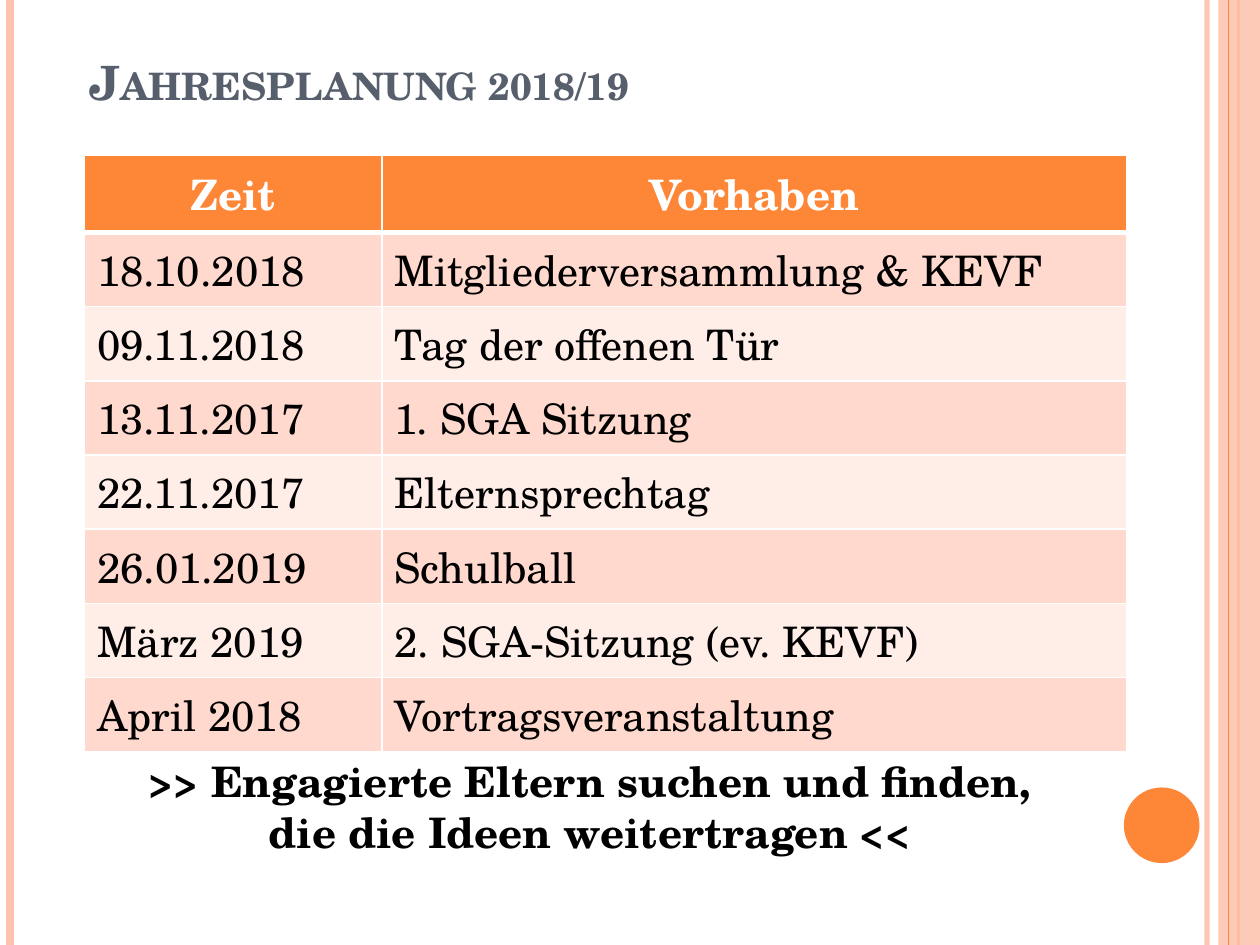
from lxml import etree
from pptx import Presentation, util as u
from pptx.dml.color import RGBColor
from pptx.enum import shapes, text
from pptx.oxml.ns import qn

FONT = "TeX Gyre Schola"
HUES = {
    "orange": "FE8637", "peach": "FEC3AE", "slate": "575F6D",
    "white": "FFFFFF", "black": "000000", "dark": "FFD9CE", "light": "FFEDE8",
}
PLANS = [
    ("Zeit", "Vorhaben"),
    ("18.10.2018", "Mitgliederversammlung & KEVF"),
    ("09.11.2018", "Tag der offenen Tür"),
    ("13.11.2017", "1. SGA Sitzung"),
    ("22.11.2017", "Elternsprechtag"),
    ("26.01.2019", "Schulball"),
    ("März 2019", "2. SGA-Sitzung (ev. KEVF)"),
    ("April 2018", "Vortragsveranstaltung"),
]


def hue(name):
    return RGBColor.from_string(HUES[name])


def write(frame, words, size=24, color="black", bold=False, align="LEFT", caps=False):
    for i, line in enumerate(words.split("\n")):
        para = frame.paragraphs[0] if i == 0 else frame.add_paragraph()
        para.alignment = getattr(text.PP_ALIGN, align)
        run = para.add_run()
        run.text = line
        run.font.name = FONT
        run.font.size = u.Pt(size)
        run.font.bold = bold
        run.font.color.rgb = hue(color)
        if caps:
            run._r.get_or_add_rPr().set("cap", "small")


def fade(fill, share):
    tint = fill.find(".//" + qn("a:srgbClr"))
    etree.SubElement(tint, qn("a:alpha"), val=str(share * 1000))


def stripe(slide, x, top, high, color, width, share=100):
    line = slide.shapes.add_connector(
        shapes.MSO_CONNECTOR.STRAIGHT,
        u.Inches(x), u.Inches(top), u.Inches(x), u.Inches(top + high))
    line.line.color.rgb = hue(color)
    line.line.width = u.Pt(width)
    props = line._element.spPr
    if share < 100:
        fade(props, share)
    etree.SubElement(props, qn("a:effectLst"))


def solid(slide, kind, box, color, share=100):
    shape = slide.shapes.add_shape(kind, *map(u.Inches, box))
    shape.shadow.inherit = False
    shape.fill.solid()
    shape.fill.fore_color.rgb = hue(color)
    shape.line.fill.background()
    if share < 100:
        fade(shape._element.spPr, share)


def frame_page(slide, box):
    left, top, wide, high = box
    right = left + wide
    stripe(slide, right - 0.42, top, high, "peach", 3, 93)
    stripe(slide, left + 0.08, top, high, "peach", 4.5)
    stripe(slide, right - 0.17, top, high, "orange", 1.5)
    solid(slide, shapes.MSO_SHAPE.RECTANGLE, (right - 0.33, top, 0.33, high), "peach", 87)
    stripe(slide, right - 0.25, top, high, "orange", 0.75)
    solid(slide, shapes.MSO_SHAPE.OVAL, (right - 1.08, top + 6.25, 0.6, 0.6), "orange")


def edge(cell, side, width):
    line = etree.SubElement(cell._tc.get_or_add_tcPr(), qn("a:" + side), w=str(u.Pt(width)))
    fill = etree.SubElement(line, qn("a:solidFill"))
    etree.SubElement(fill, qn("a:srgbClr"), val=HUES["white"])


def plan_table(slide, box):
    left, top, wide, high = box
    table = slide.shapes.add_table(len(PLANS), 2, *map(u.Inches, box)).table
    first = 2.36
    table.columns[0].width = u.Inches(first)
    table.columns[1].width = u.Inches(wide - first)
    for r, plan in enumerate(PLANS):
        table.rows[r].height = u.Inches(high / len(PLANS))
        head = r == 0
        back = "orange" if head else "dark" if r % 2 else "light"
        for c, words in enumerate(plan):
            cell = table.cell(r, c)
            for side in ("lnL", "lnR", "lnT", "lnB"):
                thick = (r, side) in ((0, "lnB"), (1, "lnT"))
                edge(cell, side, 3 if thick else 1)
            cell.fill.solid()
            cell.fill.fore_color.rgb = hue(back)
            write(cell.text_frame, words, bold=head,
                  color="white" if head else "black",
                  align="CENTER" if head else "LEFT")


def title_bar(slide, box):
    title = slide.shapes.title
    title.left, title.top, title.width, title.height = map(u.Inches, box)
    frame = title.text_frame
    frame.vertical_anchor = text.MSO_ANCHOR.BOTTOM
    frame.auto_size = text.MSO_AUTO_SIZE.NONE
    write(frame, "Jahresplanung 2018/19", size=27, color="slate", bold=True, caps=True)


def appeal(slide, box):
    frame = slide.shapes.add_textbox(*map(u.Inches, box)).text_frame
    frame.word_wrap = True
    frame.auto_size = text.MSO_AUTO_SIZE.SHAPE_TO_FIT_TEXT
    write(frame, ">> Engagierte Eltern suchen und finden,\ndie die Ideen weitertragen <<",
          bold=True, align="CENTER")


def main():
    deck = Presentation()
    deck.slide_width, deck.slide_height = u.Inches(10), u.Inches(7.5)
    slide = deck.slides.add_slide(deck.slide_layouts[5])
    frame_page(slide, (0, 0, 10, 7.5))
    plan_table(slide, (0.67, 1.23, 8.27, 4.49))
    title_bar(slide, (0.61, 0.38, 8.17, 0.54))
    appeal(slide, (1.06, 5.95, 7.24, 0.91))
    deck.save("out.pptx")


if __name__ == "__main__":
    main()
